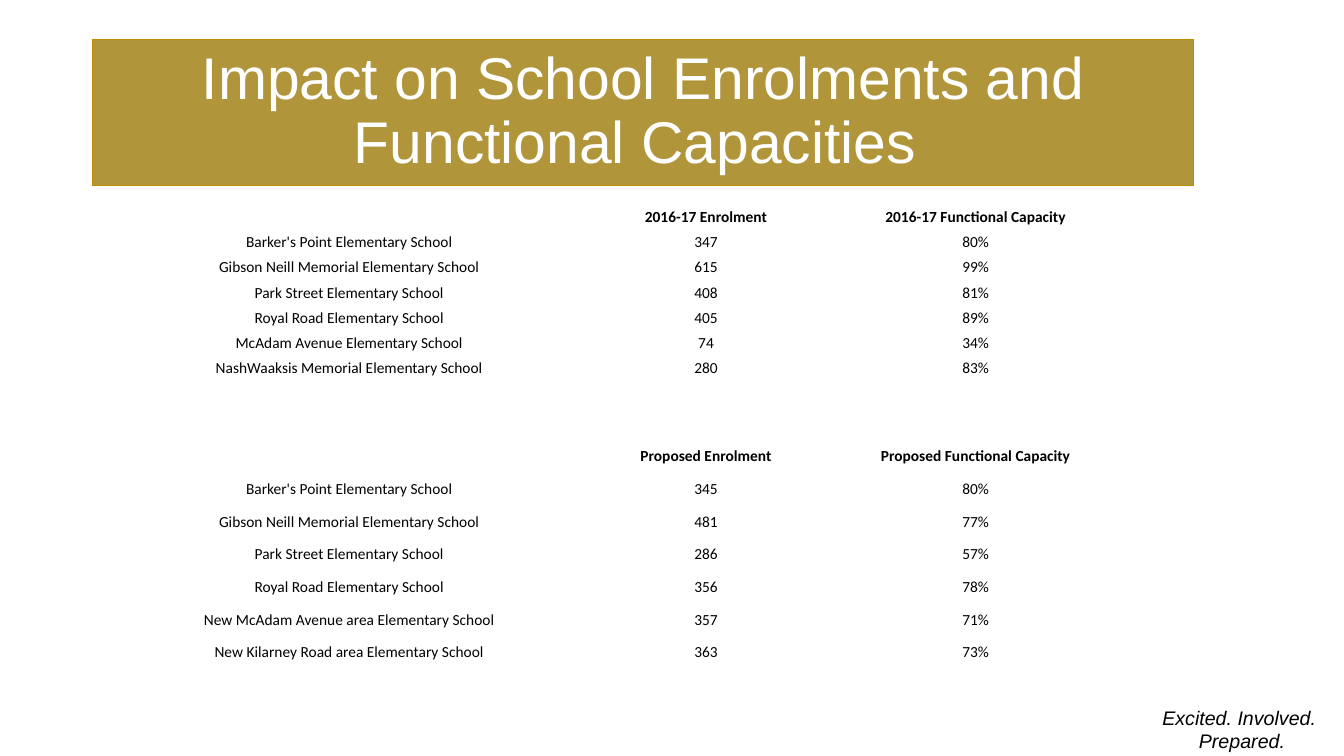
from lxml import etree
from pptx import Presentation
from pptx.dml.color import RGBColor
from pptx.enum.text import MSO_ANCHOR, MSO_AUTO_SIZE, PP_ALIGN
from pptx.oxml.ns import qn
from pptx.util import Pt

CENTER = PP_ALIGN.CENTER
MIDDLE = MSO_ANCHOR.MIDDLE
BOTTOM = MSO_ANCHOR.BOTTOM
GROW = MSO_AUTO_SIZE.SHAPE_TO_FIT_TEXT

GOLD = RGBColor(0xB0, 0x95, 0x3A)
EDGE = RGBColor(0xBD, 0x8E, 0x00)
WHITE = RGBColor(0xFF, 0xFF, 0xFF)
BLACK = RGBColor(0x00, 0x00, 0x00)

COLS = (350.64, 159.12, 226.08)

CURRENT = (
    ("", "2016-17 Enrolment", "2016-17 Functional Capacity"),
    ("Barker's Point Elementary School", "347", "80%"),
    ("Gibson Neill Memorial Elementary School", "615", "99%"),
    ("Park Street Elementary School", "408", "81%"),
    ("Royal Road Elementary School", "405", "89%"),
    ("McAdam Avenue Elementary School", "74", "34%"),
    ("NashWaaksis Memorial Elementary School", "280", "83%"),
)
PROPOSED = (
    ("", "Proposed Enrolment", "Proposed Functional Capacity"),
    ("Barker's Point Elementary School", "345", "80%"),
    ("Gibson Neill Memorial Elementary School", "481", "77%"),
    ("Park Street Elementary School", "286", "57%"),
    ("Royal Road Elementary School", "356", "78%"),
    ("New McAdam Avenue area Elementary School", "357", "71%"),
    ("New Kilarney Road area Elementary School", "363", "73%"),
)


def add_run(para, text, size, face, color, bold=False, italic=False):
    run = para.add_run()
    run.text = text
    font = run.font
    font.size, font.name = Pt(size), face
    font.bold, font.italic = bold, italic
    font.color.rgb = color


def add_title(slide, left, top, width, height):
    title = slide.shapes.title
    title.left, title.top = Pt(left), Pt(top)
    title.width, title.height = Pt(width), Pt(height)
    title.fill.solid()
    title.fill.fore_color.rgb = GOLD
    title.line.color.rgb = EDGE
    title.line.width = Pt(1)
    frame = title.text_frame
    frame.word_wrap = True
    frame.auto_size = MSO_AUTO_SIZE.NONE
    frame.vertical_anchor = MIDDLE
    para = frame.paragraphs[0]
    para.alignment = CENTER
    para.line_spacing = 0.9
    add_run(para, "Impact on School Enrolments and Functional Capacities ",
            42, "Arial", WHITE)


def fill_cell(cell, text, bold):
    cell.fill.background()
    cell.vertical_anchor = BOTTOM
    cell.margin_left = cell.margin_right = cell.margin_top = Pt(0.72)
    cell.margin_bottom = 0
    para = cell.text_frame.paragraphs[0]
    para.alignment = CENTER
    if text:
        add_run(para, text, 11, "Calibri", BLACK, bold)
    else:
        # An empty cell needs its own text size, or its row grows.
        etree.SubElement(para._p, qn("a:endParaRPr"), sz="1100")


def add_grid(slide, data, left, top, width, height):
    table = slide.shapes.add_table(len(data), len(COLS), Pt(left), Pt(top),
                                   Pt(width), Pt(height)).table
    table.first_row = table.horz_banding = False
    for col, size in zip(table.columns, COLS):
        col.width = Pt(size)
    for r, (row, texts) in enumerate(zip(table.rows, data)):
        row.height = Pt(height / len(data))
        for cell, text in zip(row.cells, texts):
            fill_cell(cell, text, r == 0)


def add_motto(slide, left, top, width, height):
    box = slide.shapes.add_textbox(Pt(left), Pt(top), Pt(width), Pt(height))
    frame = box.text_frame
    frame.word_wrap = True
    frame.auto_size = GROW
    para = frame.paragraphs[0]
    para.alignment = CENTER
    add_run(para, "Excited. Involved.", 14, "Arial", BLACK, italic=True)
    para.add_line_break()
    add_run(para, " Prepared.", 14, "Arial", BLACK, italic=True)


def main():
    deck = Presentation()
    deck.slide_width, deck.slide_height = Pt(960), Pt(540)
    slide = deck.slides.add_slide(deck.slide_layouts[5])
    add_motto(slide, 793.44, 500.4, 183.6, 41.04)
    add_title(slide, 66.24, 28.08, 786.24, 104.4)
    add_grid(slide, PROPOSED, 74.16, 309.6, sum(COLS), 163.44)
    add_grid(slide, CURRENT, 74.16, 144, sum(COLS), 126)
    deck.save("out.pptx")


if __name__ == "__main__":
    main()
